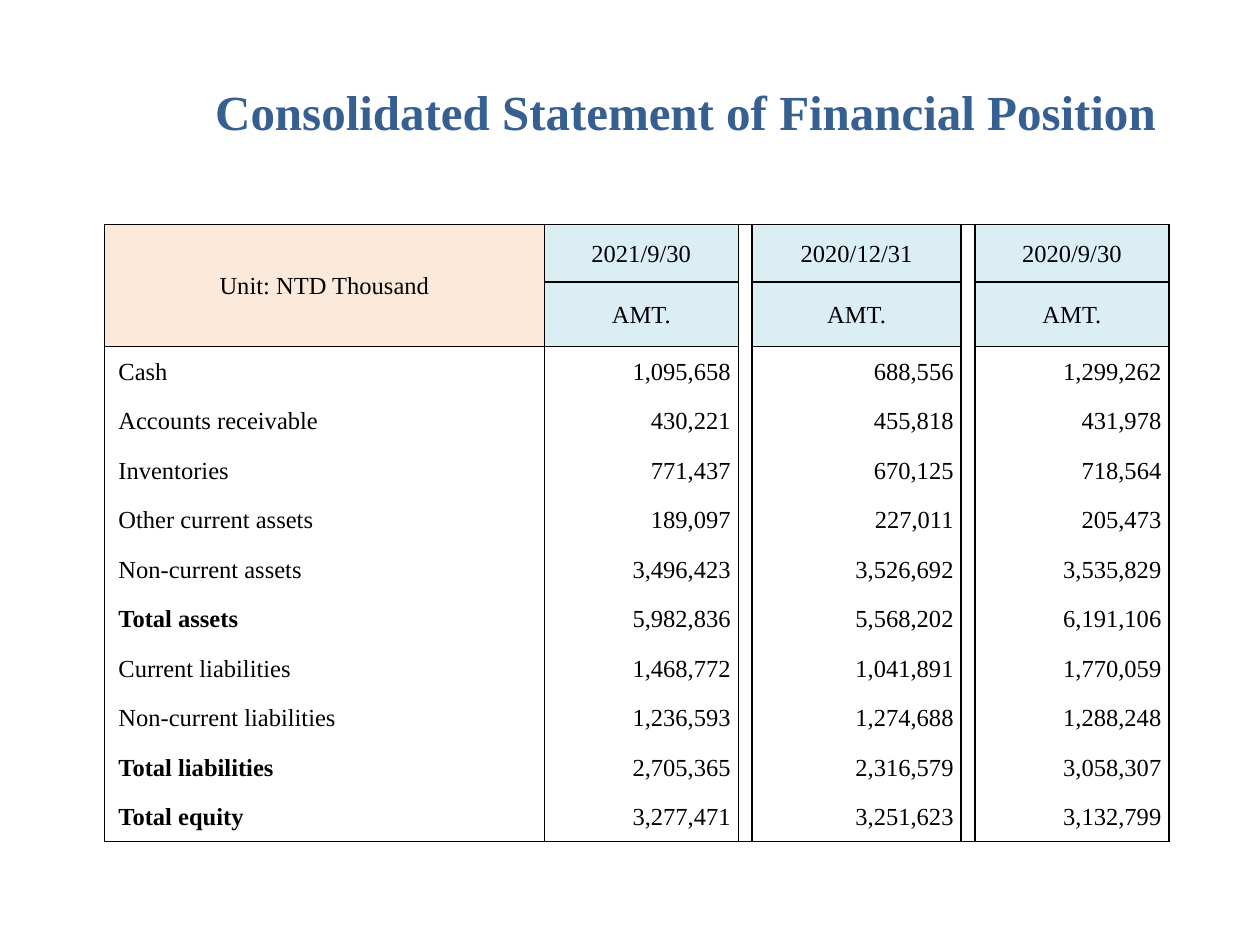
import pptx
import pptx.dml.color
import pptx.enum.text
import pptx.oxml
import pptx.oxml.ns
import pptx.util
from pptx.util import Inches

TITLE = "Consolidated Statement of Financial Position"
UNIT = "Unit: NTD Thousand"
AMOUNT = "AMT."
DATES = ["2021/9/30", "2020/12/31", "2020/9/30"]
ITEMS = [
    ("Cash", "1,095,658", "688,556", "1,299,262"),
    ("Accounts receivable", "430,221", "455,818", "431,978"),
    ("Inventories", "771,437", "670,125", "718,564"),
    ("Other current assets", "189,097", "227,011", "205,473"),
    ("Non-current assets", "3,496,423", "3,526,692", "3,535,829"),
    ("Total assets", "5,982,836", "5,568,202", "6,191,106"),
    ("Current liabilities", "1,468,772", "1,041,891", "1,770,059"),
    ("Non-current liabilities", "1,236,593", "1,274,688", "1,288,248"),
    ("Total liabilities", "2,705,365", "2,316,579", "3,058,307"),
    ("Total equity", "3,277,471", "3,251,623", "3,132,799"),
]

FONT = "Times New Roman"
COLORS = {"title": "376092", "text": "000000", "line": "000000",
          "unit": "FDE9D9", "date": "DBEEF3"}
COLUMN_WIDTHS = [3.49, 1.54, 0.1, 1.66, 0.1, 1.54]
GAP_COLUMNS = (2, 4)
HEADER_HEIGHTS = [0.46, 0.51]
TABLE_LEFT, TABLE_TOP, TABLE_HEIGHT = 0.83, 1.78, 4.9
ITEM_HEIGHT = (TABLE_HEIGHT - sum(HEADER_HEIGHTS)) / len(ITEMS)
ROW_HEIGHTS = HEADER_HEIGHTS + [ITEM_HEIGHT] * len(ITEMS)
LAST_EDGE = len(ROW_HEIGHTS)
ALIGN = pptx.enum.text.PP_ALIGN


def rgb(name):
    return pptx.dml.color.RGBColor.from_string(COLORS[name])


def format_font(font, size, color, bold=False):
    font.name = FONT
    font.size = pptx.util.Pt(size)
    font.bold = bold
    font.color.rgb = rgb(color)


def with_gaps(first, values):
    return [first, values[0], "", values[1], "", values[2]]


def has_rule(edge, column):
    return edge in (0, LAST_EDGE) or (column not in GAP_COLUMNS and edge in (1, 2))


def set_borders(cell, row, column):
    properties = cell._tc.get_or_add_tcPr()
    sides = {"L": True, "R": True, "T": has_rule(row, column), "B": has_rule(row + 1, column)}
    for side, visible in sides.items():
        fill = (f'<a:solidFill><a:srgbClr val="{COLORS["line"]}"/></a:solidFill>'
                if visible else "<a:noFill/>")
        properties.append(pptx.oxml.parse_xml(
            f'<a:ln{side} {pptx.oxml.ns.nsdecls("a")} w="12700">{fill}</a:ln{side}>'))


def format_cell(cell, row, column, text):
    header = row < len(HEADER_HEIGHTS)
    label = column == 0 and not header
    cell.text_frame.text = text
    cell.vertical_anchor = pptx.enum.text.MSO_ANCHOR.MIDDLE
    cell.margin_top = Inches(0.01)
    cell.margin_bottom = Inches(0)
    cell.margin_left = Inches(0.11 if label else 0.01)
    cell.margin_right = Inches(0.01 if header or label else 0.06)
    set_borders(cell, row, column)
    if header and column not in GAP_COLUMNS:
        cell.fill.solid()
        cell.fill.fore_color.rgb = rgb("date" if column else "unit")
    else:
        cell.fill.background()
    paragraph = cell.text_frame.paragraphs[0]
    paragraph.alignment = ALIGN.CENTER if header else ALIGN.LEFT if label else ALIGN.RIGHT
    format_font(paragraph.font, 14, "text")
    for run in paragraph.runs:
        format_font(run.font, 14, "text", label and text.startswith("Total"))


def add_title(slide):
    box = slide.shapes.add_textbox(Inches(1.61), Inches(0.6), Inches(7.87), Inches(1.25))
    box.text_frame.word_wrap = True
    box.text_frame.text = TITLE
    format_font(box.text_frame.paragraphs[0].runs[0].font, 28, "title", True)


def add_statement(slide):
    rows = [with_gaps(UNIT, DATES), with_gaps("", [AMOUNT] * len(DATES))]
    rows += [with_gaps(label, values) for label, *values in ITEMS]
    table = slide.shapes.add_table(
        len(rows), len(COLUMN_WIDTHS), Inches(TABLE_LEFT), Inches(TABLE_TOP),
        Inches(sum(COLUMN_WIDTHS)), Inches(TABLE_HEIGHT)).table
    table.first_row = False
    table.horz_banding = False
    for column, width in zip(table.columns, COLUMN_WIDTHS):
        column.width = Inches(width)
    for row, height in zip(table.rows, ROW_HEIGHTS):
        row.height = Inches(height)
    for row, texts in enumerate(rows):
        for column, text in enumerate(texts):
            format_cell(table.cell(row, column), row, column, text)
    table.cell(0, 0).merge(table.cell(1, 0))


def main():
    presentation = pptx.Presentation()
    presentation.slide_width = Inches(10)
    presentation.slide_height = Inches(7.5)
    slide = presentation.slides.add_slide(presentation.slide_layouts[6])
    add_title(slide)
    add_statement(slide)
    presentation.save("out.pptx")


if __name__ == "__main__":
    main()
